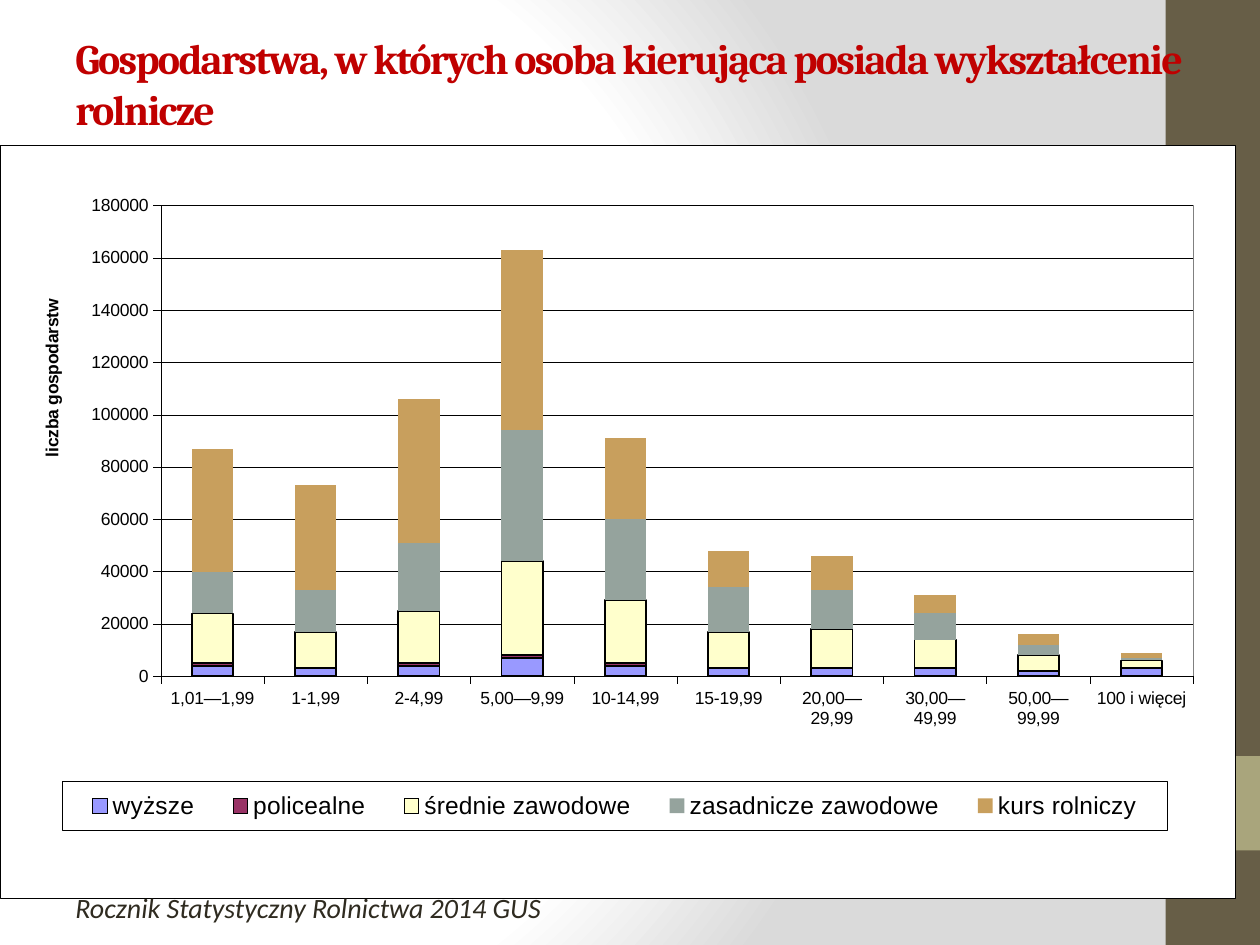
from typing import NamedTuple, Optional

from lxml.etree import fromstring
from pptx import Presentation
from pptx.chart.data import CategoryChartData
from pptx.dml.color import RGBColor
from pptx.enum.chart import XL_CHART_TYPE, XL_LEGEND_POSITION, XL_TICK_MARK
from pptx.enum.shapes import MSO_SHAPE
from pptx.enum.text import MSO_ANCHOR
from pptx.util import Pt

COLOURS = {
    "white": "FFFFFF", "grey": "DADADA", "black": "000000", "frame": "808080",
    "band": "675E47", "accent": "A9A57C", "title": "C00000", "source": "2F2B20",
    "violet": "9999FF", "plum": "993366", "cream": "FFFFCC",
    "sage": "95A39D", "sand": "C89F5D",
}
DRAWING = "http://schemas.openxmlformats.org/drawingml/2006/main"
CHART = "http://schemas.openxmlformats.org/drawingml/2006/chart"
SLIDE = "http://schemas.openxmlformats.org/presentationml/2006/main"
NAMESPACES = f'xmlns:a="{DRAWING}" xmlns:c="{CHART}" xmlns:p="{SLIDE}"'


class Area(NamedTuple):
    left: float
    top: float
    width: float
    height: float

    def points(self):
        return [Pt(length) for length in self]


class Band(NamedTuple):
    area: Area
    colour: str


class TextStyle(NamedTuple):
    font: str
    size: float
    colour: str
    bold: bool = False
    italic: bool = False
    tracking: Optional[int] = None  # hundredths of a point


class Level(NamedTuple):
    name: str
    values: list[int]
    colour: str
    outlined: bool = False


BANDS = [
    Band(Area(666, 0, 54, 540), "band"),
    Band(Area(666, 432, 54, 54), "accent"),
]
FARM_SIZES = ["1,01—1,99", "1-1,99", "2-4,99", "5,00—9,99", "10-14,99", "15-19,99",
              "20,00—29,99", "30,00—49,99", "50,00—99,99", "100 i więcej"]
LEVELS = [
    Level("wyższe", [4000, 3000, 4000, 7000, 4000, 3000, 3000, 3000, 2000, 3000],
          "violet", True),
    Level("policealne", [1000, 0, 1000, 1000, 1000, 0, 0, 0, 0, 0], "plum", True),
    Level("średnie zawodowe",
          [19000, 14000, 20000, 36000, 24000, 14000, 15000, 11000, 6000, 3000],
          "cream", True),
    Level("zasadnicze zawodowe",
          [16000, 16000, 26000, 50000, 31000, 17000, 15000, 10000, 4000, 1000], "sage"),
    Level("kurs rolniczy",
          [47000, 40000, 55000, 69000, 31000, 14000, 13000, 7000, 4000, 2000], "sand"),
]


def rgb(name: str) -> RGBColor:
    return RGBColor.from_string(COLOURS[name])


def set_background(page) -> None:
    stops = "".join(
        f'<a:gs pos="{position}"><a:srgbClr val="{COLOURS[name]}"/></a:gs>'
        for position, name in [(0, "white"), (75000, "white"), (100000, "grey")])
    page.element.cSld.insert(0, fromstring(
        f'<p:bg {NAMESPACES}><p:bgPr><a:gradFill rotWithShape="1"><a:gsLst>{stops}</a:gsLst>'
        '<a:path path="circle"><a:fillToRect l="20000" t="50000" r="100000" b="50000"/>'
        '</a:path></a:gradFill><a:effectLst/></p:bgPr></p:bg>'))


def add_band(page, band: Band) -> None:
    shape = page.shapes.add_shape(MSO_SHAPE.RECTANGLE, *band.area.points())
    shape.shadow.inherit = False
    shape.fill.solid()
    shape.fill.fore_color.rgb = rgb(band.colour)
    shape.line.fill.background()


def style_font(font, style: TextStyle) -> None:
    font.name, font.size = style.font, Pt(style.size)
    font.bold, font.italic = style.bold, style.italic
    font.color.rgb = rgb(style.colour)


def add_text(page, area: Area, text: str, style: TextStyle, anchor=MSO_ANCHOR.TOP):
    frame = page.shapes.add_textbox(*area.points()).text_frame
    frame.word_wrap = True
    frame.vertical_anchor = anchor
    paragraph = frame.paragraphs[0]
    span = paragraph.add_run()
    span.text = text
    style_font(span.font, style)
    if style.tracking is not None:
        span.font._element.set("spc", str(style.tracking))
    return paragraph


def style_line(line, colour: str, width: float) -> None:
    line.color.rgb = rgb(colour)
    line.width = Pt(width)


def frame_properties(colour: str):
    """Return white fill and thin outline properties for a chart part."""
    return fromstring(
        f'<c:spPr {NAMESPACES}><a:solidFill><a:srgbClr val="{COLOURS["white"]}"/></a:solidFill>'
        f'<a:ln w="{Pt(0.25)}"><a:solidFill><a:srgbClr val="{COLOURS[colour]}"/></a:solidFill>'
        '</a:ln></c:spPr>')


def place_part(part, **fractions: float) -> None:
    """Position a chart part by fractions of the chart's width and height."""
    for old in part.xpath("c:layout"):
        part.remove(old)
    is_plot = part.tag.endswith("plotArea")
    target = '<c:layoutTarget val="inner"/>' if is_plot else ""
    modes = "".join(f'<c:{axis}Mode val="edge"/>' for axis in "xy")
    sizes = "".join(f'<c:{key} val="{value}"/>' for key, value in fractions.items())
    layout = fromstring(f'<c:layout {NAMESPACES}><c:manualLayout>{target}{modes}{sizes}'
                        '</c:manualLayout></c:layout>')
    if is_plot:
        part.insert(0, layout)
    else:
        part.xpath("c:overlay")[0].addprevious(layout)


def add_education_chart(page, area: Area) -> None:
    data = CategoryChartData(number_format="General")
    data.categories = FARM_SIZES
    for level in LEVELS:
        data.add_series(level.name, level.values)
    chart = page.shapes.add_chart(
        XL_CHART_TYPE.COLUMN_STACKED, *area.points(), data).chart
    label_style = TextStyle("Arial", 10, "black")
    style_font(chart.font, label_style)
    chart.has_title = False

    plot = chart.plots[0]
    plot.gap_width, plot.overlap = 150, 100
    plot.vary_by_categories = False
    for series, level in zip(plot.series, LEVELS):
        series.format.fill.solid()
        series.format.fill.fore_color.rgb = rgb(level.colour)
        if level.outlined:
            style_line(series.format.line, "black", 1)
        else:
            series.format.line.fill.background()

    for axis in (chart.category_axis, chart.value_axis):
        axis.major_tick_mark = XL_TICK_MARK.OUTSIDE
        style_font(axis.tick_labels.font, label_style)
        style_line(axis.format.line, "black", 0.25)
    counts = chart.value_axis
    counts.minimum_scale, counts.maximum_scale, counts.major_unit = 0, 180000, 20000
    counts.has_major_gridlines = True
    style_line(counts.major_gridlines.format.line, "black", 0.25)
    span = counts.axis_title.text_frame.paragraphs[0].add_run()
    span.text = "liczba gospodarstw"
    style_font(span.font, label_style._replace(bold=True))

    chart.has_legend = True
    legend = chart.legend
    legend.position = XL_LEGEND_POSITION.BOTTOM
    legend.include_in_layout = False
    style_font(legend.font, label_style._replace(size=14))

    root = chart.element
    plot_area = root.xpath("c:chart/c:plotArea")[0]
    legend_part = root.xpath("c:chart/c:legend")[0]
    place_part(plot_area, x=0.13, y=0.08, w=0.836, h=0.625)
    place_part(plot_area.xpath("c:valAx/c:title")[0], x=0.03, y=0.2)
    place_part(legend_part, x=0.05, y=0.845, w=0.895, h=0.064)
    plot_area.append(frame_properties("frame"))
    for owner in (root, legend_part):
        owner.xpath("c:txPr")[0].addprevious(frame_properties("black"))


def main() -> None:
    deck = Presentation()
    deck.slide_width, deck.slide_height = Pt(720), Pt(540)
    page = deck.slides.add_slide(deck.slide_layouts[6])
    set_background(page)
    for band in BANDS:
        add_band(page, band)
    add_text(page, Area(36, 12, 653, 71),
             "Gospodarstwa, w których osoba kierująca posiada wykształcenie rolnicze",
             TextStyle("Cambria", 24, "title", bold=True, tracking=-100), MSO_ANCHOR.MIDDLE)
    add_education_chart(page, Area(0, 83, 706, 430.5))
    source = add_text(page, Area(36, 505.5, 600, 34.5),
                      "Rocznik Statystyczny Rolnictwa 2014 GUS",
                      TextStyle("Calibri", 16, "source", italic=True))
    source.space_before, source.space_after = Pt(3.2), Pt(6)
    deck.save("out.pptx")


if __name__ == "__main__":
    main()
